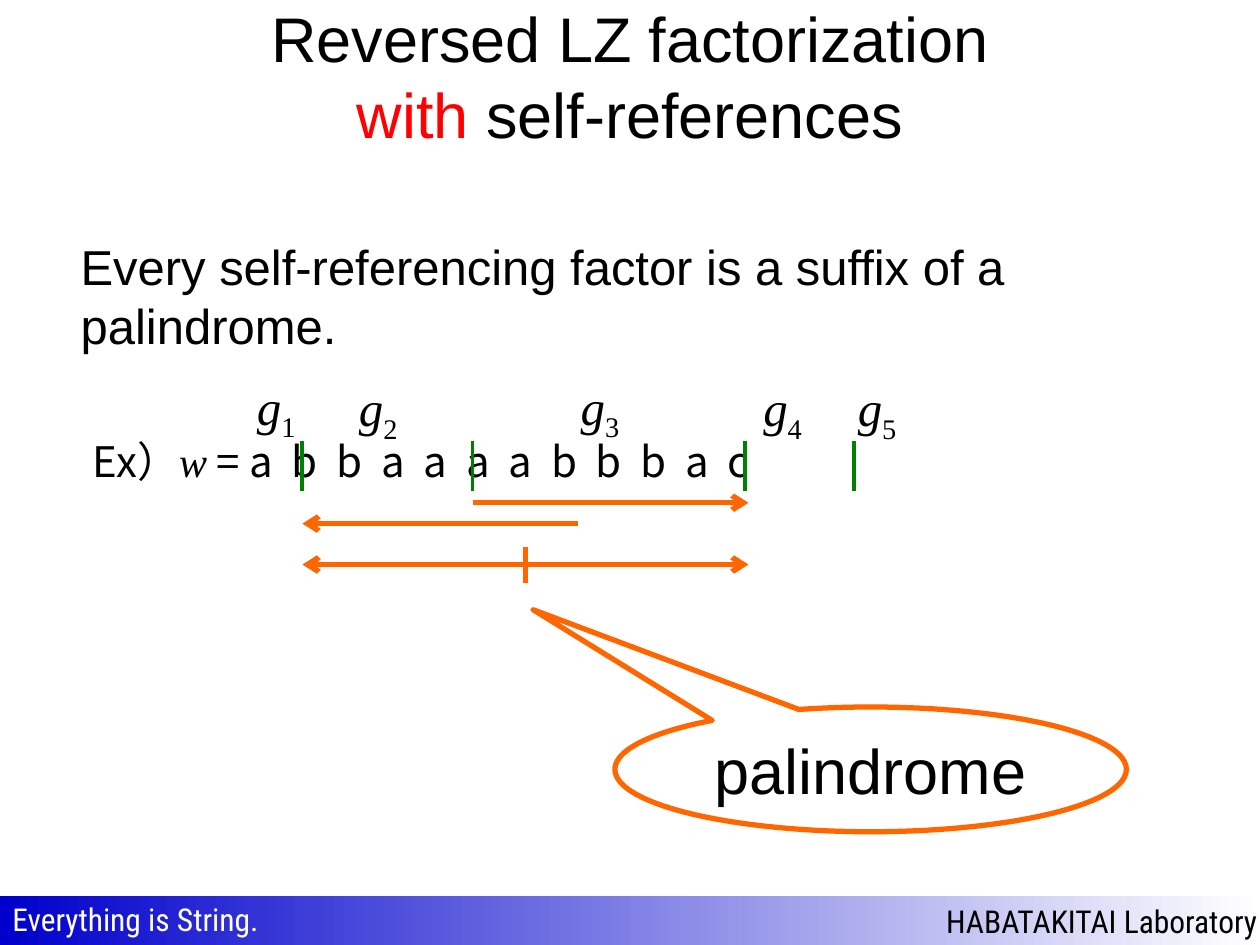
from typing import NamedTuple

from lxml import etree
from pptx import Presentation
from pptx.dml.color import RGBColor
from pptx.enum.shapes import MSO_CONNECTOR, MSO_SHAPE
from pptx.enum.text import MSO_ANCHOR, PP_ALIGN
from pptx.oxml.ns import qn
from pptx.util import Pt

STRAIGHT = MSO_CONNECTOR.STRAIGHT
RECT, CALLOUT = MSO_SHAPE.RECTANGLE, MSO_SHAPE.OVAL_CALLOUT
TOP, MIDDLE = MSO_ANCHOR.TOP, MSO_ANCHOR.MIDDLE
LEFT, CENTER, RIGHT = PP_ALIGN.LEFT, PP_ALIGN.CENTER, PP_ALIGN.RIGHT

BLACK = RGBColor(0x00, 0x00, 0x00)
WHITE = RGBColor(0xFF, 0xFF, 0xFF)
RED = RGBColor(0xFF, 0x00, 0x00)
BLUE = RGBColor(0x00, 0x00, 0xCC)
GREEN = RGBColor(0x00, 0x80, 0x00)
ORANGE = RGBColor(0xFF, 0x66, 0x00)

SANS, SERIF = "Arial", "Times New Roman"
CJK, CONDENSED = "Noto Sans CJK JP", "Roboto Condensed"

SLIDE_W, SLIDE_H = 720, 540
FOOTER_TOP = 512


class Run(NamedTuple):
    text: str
    size: float
    font: str = SANS
    color: RGBColor = BLACK
    italic: bool = False
    baseline: int = 0


class Box(NamedTuple):
    left: float
    top: float
    width: float
    height: float


class Line(NamedTuple):
    x1: float
    y1: float
    x2: float
    y2: float
    color: RGBColor = ORANGE
    width: float = 3
    head: bool = False
    tail: bool = False


class Factor(NamedTuple):
    number: int
    label_left: float
    label_top: float


FACTORS = [
    Factor(1, 139.7, 211.7),
    Factor(2, 198, 212.4),
    Factor(3, 324.7, 211.7),
    Factor(4, 429.1, 212.4),
    Factor(5, 483.1, 212.4),
]
FACTOR_ENDS = [172.8, 270, 425.5, 488.2]
START, SELF_START, END = 172.8, 270, 427.7
AXIS = 300.2

ARROWS = [
    Line(SELF_START, 287.3, END, 287.3, tail=True),
    Line(330.5, 299.2, START, 299.2, tail=True),
    Line(START, 322.6, END, 322.6, head=True, tail=True),
    Line(AXIS, 312.5, AXIS, 333.4),
]


def add_runs(p, runs: list[Run]) -> None:
    for run in runs:
        r = p.add_run()
        r.text = run.text
        font = r.font
        font.size, font.name, font.italic = Pt(run.size), run.font, run.italic
        font.color.rgb = run.color
        rpr = r._r.get_or_add_rPr()
        etree.SubElement(rpr, qn("a:ea")).set("typeface", run.font)
        if run.baseline:
            rpr.set("baseline", str(run.baseline * 1000))


def fill_text(sp, lines: list[list[Run]], align=LEFT, anchor=TOP, wrap=True):
    """Put the lines into one paragraph, separated by line breaks."""
    tf = sp.text_frame
    tf.word_wrap, tf.vertical_anchor = wrap, anchor
    p = tf.paragraphs[0]
    p.alignment = align
    for i, runs in enumerate(lines):
        if i:
            p.add_line_break()
        add_runs(p, runs)
    return tf


def add_text(slide, box: Box, lines: list[list[Run]], **layout):
    sp = slide.shapes.add_textbox(*map(Pt, box))
    return fill_text(sp, lines, **layout)


def add_line(slide, line: Line) -> None:
    cxn = slide.shapes.add_connector(
        STRAIGHT, Pt(line.x1), Pt(line.y1), Pt(line.x2), Pt(line.y2))
    cxn.line.color.rgb = line.color
    cxn.line.width = Pt(line.width)
    ln = cxn.line._get_or_add_ln()
    for tag, shown in (("a:headEnd", line.head), ("a:tailEnd", line.tail)):
        if shown:
            etree.SubElement(ln, qn(tag)).set("type", "arrow")
    etree.SubElement(cxn._element.spPr, qn("a:effectLst"))


def add_footer(slide) -> None:
    sp = slide.shapes.add_shape(
        RECT, 0, Pt(FOOTER_TOP), Pt(SLIDE_W), Pt(SLIDE_H - FOOTER_TOP))
    sp.shadow.inherit = False
    sp.line.fill.background()
    sp.fill.gradient()
    sp.fill.gradient_angle = 0
    for stop, color, position in zip(sp.fill.gradient_stops, (BLUE, WHITE), (0, 1)):
        stop.color.rgb = color
        stop.position = position
    tf = fill_text(sp, [[Run("HABATAKITAI Laboratory", 18, CONDENSED)]],
                   align=RIGHT, anchor=MIDDLE, wrap=False)
    tf.margin_right = Pt(1.5)
    add_text(slide, Box(0, 510.5, 160, 29),
             [[Run("Everything is String.", 18, CONDENSED, WHITE)]], wrap=False)


def add_headings(slide) -> None:
    add_text(slide, Box(36, 9.4, 648, 67),
             [[Run("Reversed LZ factorization", 36)],
              [Run("with ", 36, color=RED), Run("self-references", 36)]],
             align=CENTER, anchor=MIDDLE)
    tf = add_text(
        slide, Box(39, 131.8, 681, 381.6),
        [[Run("Every self-referencing factor is a suffix of a palindrome.", 28)]])
    tf.paragraphs[0].space_before = Pt(5.6)


def add_example(slide) -> None:
    """Draw the example string with its factors and the palindrome arrows."""
    add_text(slide, Box(46, 245.5, 500, 36),
             [[Run("Ex）", 24, CJK), Run("w", 24, SERIF, italic=True),
               Run(" = a  b  b  a  a  a  a  b  b  b  a  c", 24, CJK)]])
    for x in FACTOR_ENDS:
        add_line(slide, Line(x, 252, x, 280.8, GREEN, 2.25))
    for arrow in ARROWS:
        add_line(slide, arrow)
    for factor in FACTORS:
        add_text(slide, Box(factor.label_left, factor.label_top, 42, 41),
                 [[Run("g", 28, SERIF, italic=True),
                   Run(str(factor.number), 28, SERIF, baseline=-25)]], wrap=False)


def add_callout(slide) -> None:
    sp = slide.shapes.add_shape(CALLOUT, Pt(351.4), Pt(404), Pt(292.3), Pt(71.3))
    sp.shadow.inherit = False
    sp.adjustments[0], sp.adjustments[1] = -0.66, -1.28
    sp.fill.background()
    sp.line.color.rgb = ORANGE
    sp.line.width = Pt(3)
    fill_text(sp, [[Run("palindrome", 36)]], align=CENTER, anchor=MIDDLE)


def main() -> None:
    prs = Presentation()
    prs.slide_width, prs.slide_height = Pt(SLIDE_W), Pt(SLIDE_H)
    slide = prs.slides.add_slide(prs.slide_layouts[6])
    add_footer(slide)
    add_headings(slide)
    add_example(slide)
    add_callout(slide)
    prs.save("out.pptx")


if __name__ == "__main__":
    main()
